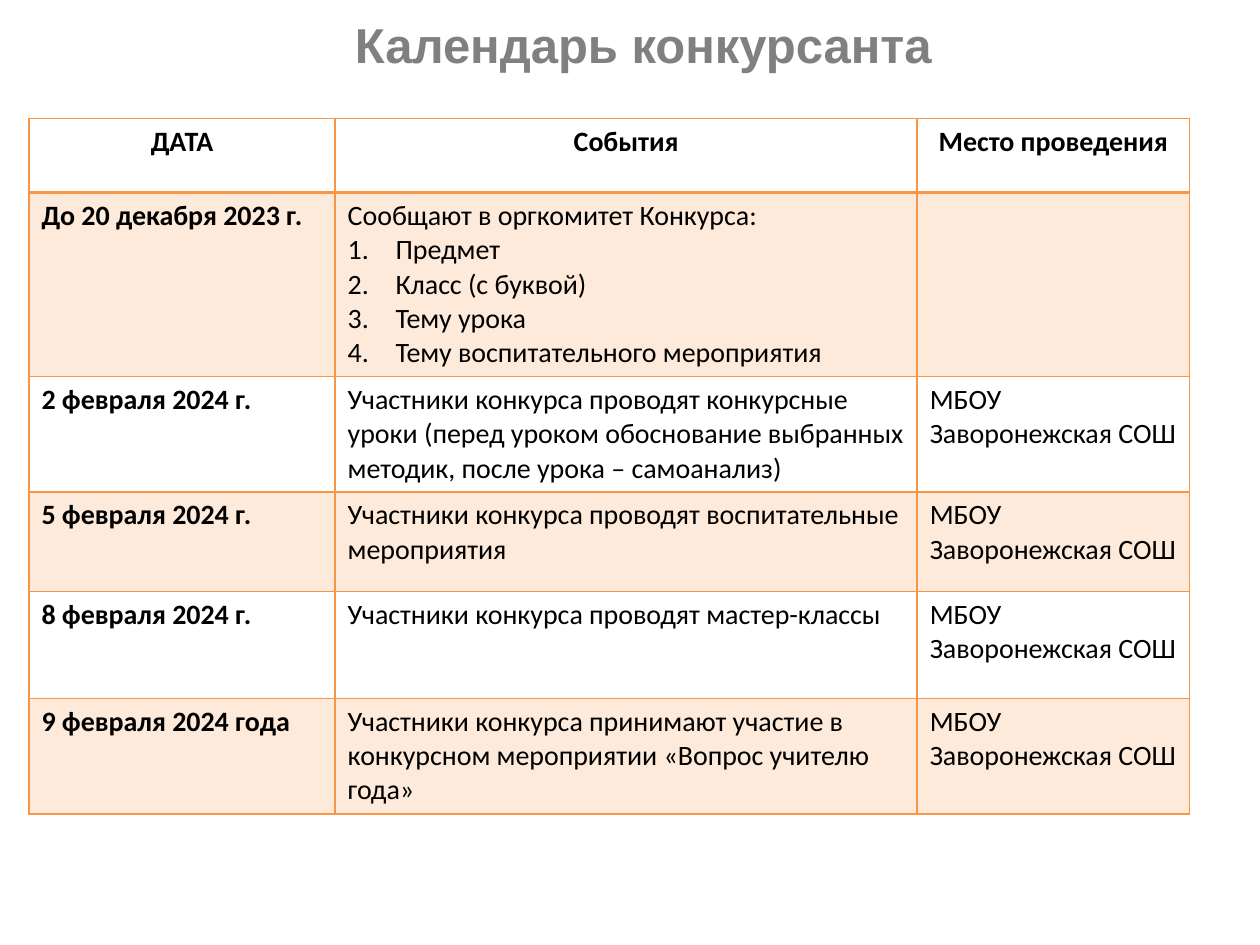
"""Build the contest calendar slide."""
from dataclasses import dataclass

from lxml import etree
from pptx import Presentation
from pptx.dml.color import RGBColor
from pptx.enum.text import MSO_ANCHOR, MSO_AUTO_SIZE, PP_ALIGN
from pptx.oxml.ns import qn
from pptx.util import Inches, Pt

LEFT, CENTER = PP_ALIGN.LEFT, PP_ALIGN.CENTER
MIDDLE = MSO_ANCHOR.MIDDLE
NO_FIT = MSO_AUTO_SIZE.NONE


@dataclass(frozen=True)
class Theme:
    grey: str = "808080"
    black: str = "000000"
    orange: str = "F79646"
    tint: int = 20
    head: str = "Arial"
    body: str = "Calibri"
    large: int = 28
    small: int = 16
    thin: int = 1
    thick: int = 2


def apply(target, values):
    for name, value in values.items():
        setattr(target, name, value)


def add_node(parent, tag, **values):
    return etree.SubElement(parent, qn(tag), values)


class Deck:
    def __init__(self, theme):
        self.theme = theme
        self.show = Presentation()
        apply(self.show, {"slide_width": Inches(10), "slide_height": Inches(7.5)})
        self.slide = self.show.slides.add_slide(self.show.slide_layouts[5])

    def label(self, para, text, face, size, color, bold, align):
        para.alignment = align
        run = para.add_run()
        run.text = text
        apply(run.font, {"name": face, "size": Pt(size), "bold": bold})
        run.font.color.rgb = RGBColor.from_string(color)

    def title(self, text, box):
        shape, theme = self.slide.shapes.title, self.theme
        apply(shape, dict(zip(("left", "top", "width", "height"), map(Inches, box))))
        frame = shape.text_frame
        apply(frame, {"word_wrap": True, "vertical_anchor": MIDDLE, "auto_size": NO_FIT})
        self.label(frame.paragraphs[0], text, theme.head, theme.large, theme.grey, True, CENTER)

    def border(self, cell, side, width):
        line = add_node(cell._tc.get_or_add_tcPr(), f"a:ln{side}", w=str(Pt(width)))
        fill = add_node(line, "a:solidFill")
        add_node(fill, "a:srgbClr", val=self.theme.orange)

    def shade(self, cell):
        cell.fill.solid()
        cell.fill.fore_color.rgb = RGBColor.from_string(self.theme.orange)
        color = cell._tc.tcPr.find(qn("a:solidFill")).find(qn("a:srgbClr"))
        add_node(color, "a:alpha", val=str(self.theme.tint * 1000))

    def number(self, para):
        props = para._p.get_or_add_pPr()
        indent = Inches(0.38)
        props.set("marL", str(indent))
        props.set("indent", str(-indent))
        add_node(props, "a:buAutoNum", type="arabicPeriod")

    def cell(self, cell, lines, row, col):
        theme = self.theme
        widths = {"L": theme.thin, "R": theme.thin,
                  "T": theme.thick if row == 1 else theme.thin,
                  "B": theme.thick if row == 0 else theme.thin}
        for side, width in widths.items():
            self.border(cell, side, width)
        if row % 2:
            self.shade(cell)
        else:
            cell.fill.background()
        frame = cell.text_frame
        for index, text in enumerate(lines):
            para = frame.add_paragraph() if index else frame.paragraphs[0]
            self.label(para, text, theme.body, theme.small, theme.black,
                       row == 0 or col == 0, LEFT if row else CENTER)
            if index:
                self.number(para)

    def table(self, rows, spot, widths, heights):
        size = (sum(widths), sum(heights))
        frame = self.slide.shapes.add_table(len(rows), len(widths), *map(Inches, spot + size))
        table = frame.table
        apply(table, {"first_row": False, "horz_banding": False})
        for col, width in zip(table.columns, widths):
            col.width = Inches(width)
        for row, height in zip(table.rows, heights):
            row.height = Inches(height)
        for row, values in enumerate(rows):
            for col, lines in enumerate(values):
                self.cell(table.cell(row, col), lines, row, col)


def main():
    place = ["МБОУ Заворонежская СОШ"]
    rows = [
        (["ДАТА"], ["События"], ["Место проведения"]),
        (["До 20 декабря 2023 г."],
         ["Сообщают в оргкомитет Конкурса:", "Предмет", "Класс (с буквой)",
          "Тему урока", "Тему воспитательного мероприятия"], []),
        (["2 февраля 2024 г."],
         ["Участники конкурса проводят конкурсные уроки (перед уроком обоснование "
          "выбранных методик, после урока – самоанализ)"], place),
        (["5 февраля 2024 г."],
         ["Участники конкурса проводят воспитательные мероприятия"], place),
        (["8 февраля 2024 г."], ["Участники конкурса проводят мастер-классы"], place),
        (["9 февраля 2024 года"],
         ["Участники конкурса принимают участие в конкурсном мероприятии "
          "«Вопрос учителю года»"], place),
    ]
    deck = Deck(Theme())
    deck.title("Календарь конкурсанта", (0.47, 0, 9.27, 0.7))
    deck.table(rows, (0.23, 0.94), (2.43, 4.62, 2.16),
               (0.59, 0.94, 0.85, 0.79, 0.85, 0.84))
    deck.show.save("out.pptx")


if __name__ == "__main__":
    main()
